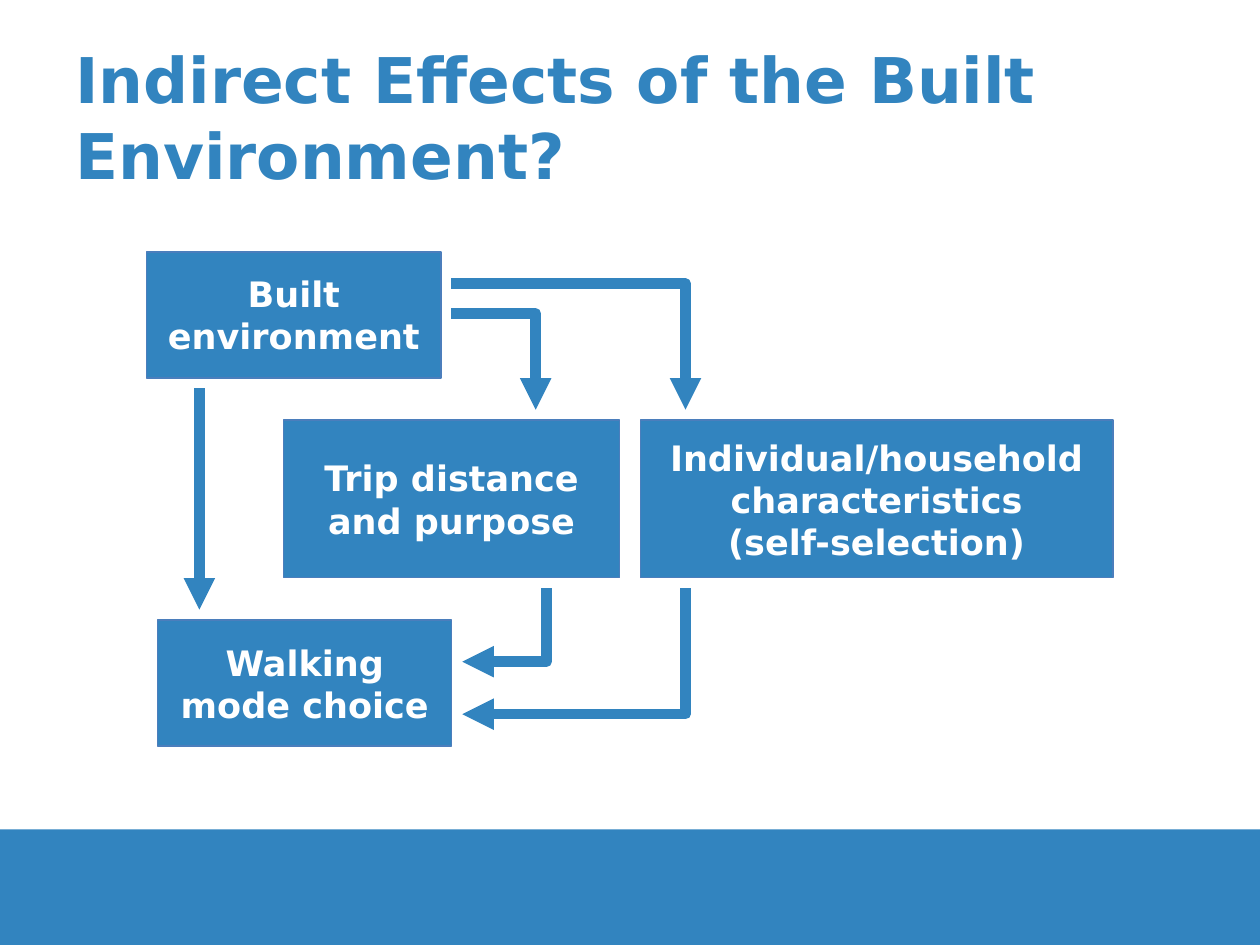
from lxml.etree import SubElement
from pptx import Presentation
from pptx.dml.color import RGBColor
from pptx.enum.shapes import MSO_CONNECTOR as Link, MSO_SHAPE as Shape
from pptx.enum.text import MSO_ANCHOR as Anchor, PP_ALIGN as Align
from pptx.oxml.ns import qn
from pptx.util import Cm, Pt

BLUE, EDGE, WHITE = "3284BF", "4B7EBC", "FFFFFF"
FONT = "DejaVu Sans"
WIDE, HIGH = 25.4, 19.05
FOOT = 2.33
GAP = 0.21  # between a box and the arrows that touch it

TITLE = "Indirect Effects of the Built Environment?"

# name: (left, top, width, height, paragraphs), in cm
BOXES = {
    "built": (2.96, 5.08, 5.93, 2.54, ["Built environment"]),
    "walk": (3.18, 12.5, 5.93, 2.54, ["Walking mode choice"]),
    "trip": (5.72, 8.47, 6.77, 3.18, ["Trip distance and purpose"]),
    "house": (12.91, 8.47, 9.53, 3.18,
              ["Individual/household characteristics", "(self-selection)"]),
}

DOWN_X = 4.02
# box, x where the arrow meets it, y where the arrow meets the other box
INTO = [("trip", 10.8, 6.32), ("house", 13.82, 5.72)]
OUT = [("trip", 11.02, 13.34), ("house", 13.82, 14.4)]


def rgb(code):
    return RGBColor.from_string(code)


def write(frame, paras, size, color, align):
    frame.word_wrap = True
    frame.vertical_anchor = Anchor.MIDDLE
    for i, text in enumerate(paras):
        para = frame.add_paragraph() if i else frame.paragraphs[0]
        para.alignment = align
        run = para.add_run()
        run.text = text
        font = run.font
        font.name, font.size, font.bold = FONT, Pt(size), True
        font.color.rgb = rgb(color)


def block(slide, *place):
    shape = slide.shapes.add_shape(Shape.RECTANGLE, *map(Cm, place))
    shape.shadow.inherit = False
    shape.fill.solid()
    shape.fill.fore_color.rgb = rgb(BLUE)
    return shape


def arrow(slide, start, end, tip="tailEnd", bent=True):
    """Bent arrows run across first, then turn once; tip names the pointed end."""
    kind = Link.ELBOW if bent else Link.STRAIGHT
    line = slide.shapes.add_connector(kind, *map(Cm, start + end))
    line.line.color.rgb = rgb(BLUE)
    line.line.width = Pt(6)
    props = line._element.spPr
    SubElement(props.find(qn("a:ln")), qn(f"a:{tip}"), type="triangle")
    SubElement(props, qn("a:effectLst"))
    if bent:
        guides = props.find(qn("a:prstGeom")).get_or_add_avLst()
        SubElement(guides, qn("a:gd"), name="adj1", fmla="val 100000")


def main():
    deck = Presentation()
    deck.slide_width, deck.slide_height = Cm(WIDE), Cm(HIGH)
    slide = deck.slides.add_slide(deck.slide_layouts[6])

    block(slide, 0, HIGH - FOOT, WIDE, FOOT).line.fill.background()
    title = slide.shapes.add_textbox(Cm(1.27), Cm(0.76), Cm(22.86), Cm(3.18))
    write(title.text_frame, [TITLE], 36, BLUE, Align.LEFT)

    for *place, paras in BOXES.values():
        box = block(slide, *place)
        box.line.color.rgb = rgb(EDGE)
        box.line.width = Pt(0.75)
        write(box.text_frame, paras, 20, WHITE, Align.CENTER)

    def top(name):
        return BOXES[name][1] - GAP

    def base(name):
        return BOXES[name][1] + BOXES[name][3] + GAP

    def right(name):
        return BOXES[name][0] + BOXES[name][2] + GAP

    arrow(slide, (DOWN_X, base("built")), (DOWN_X, top("walk")), bent=False)
    for name, x, y in INTO:
        arrow(slide, (right("built"), y), (x, top(name)))
    for name, x, y in OUT:
        arrow(slide, (right("walk"), y), (x, base(name)), tip="headEnd")

    deck.save("out.pptx")


if __name__ == "__main__":
    main()
